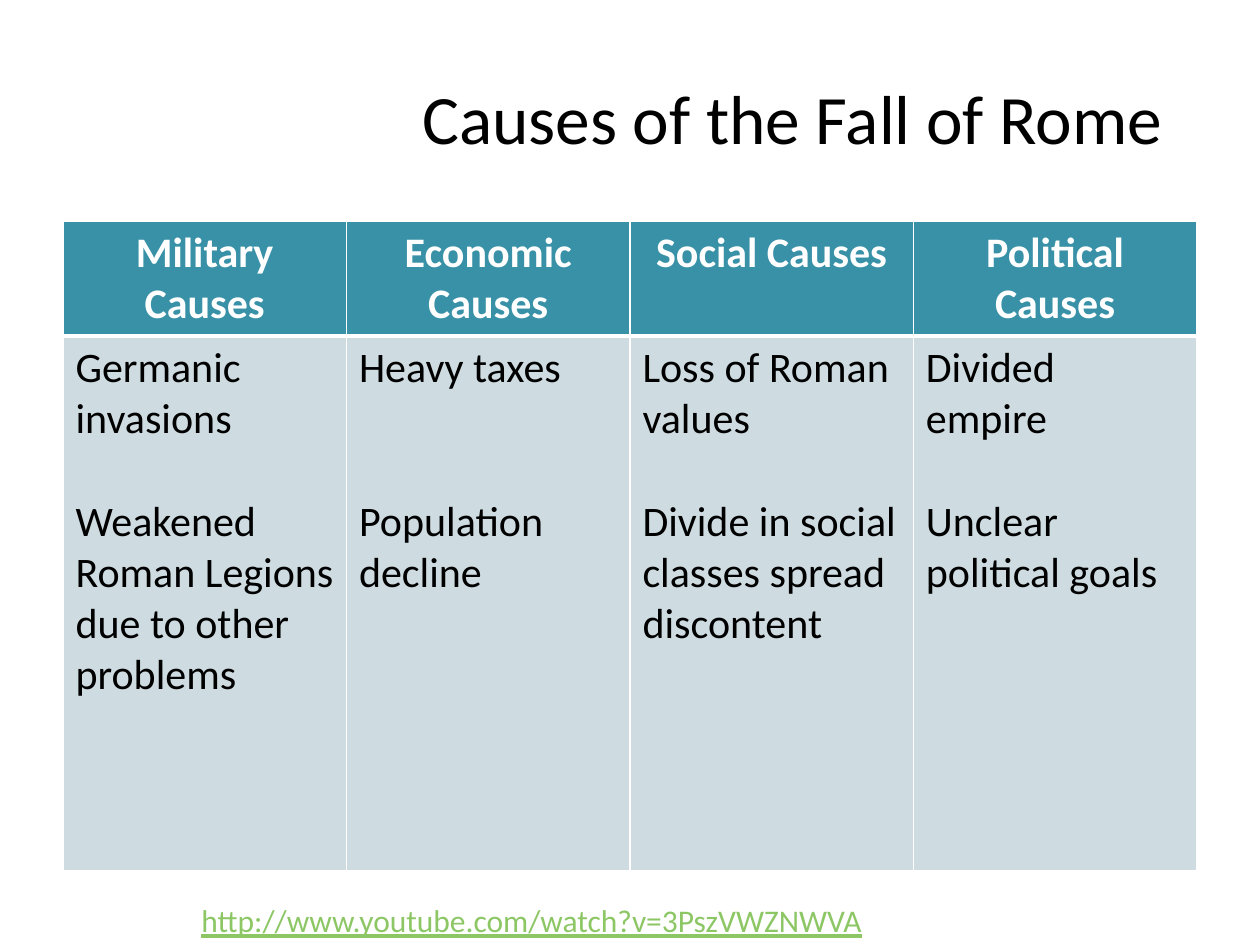
from lxml.etree import SubElement
from pptx import Presentation
from pptx.dml.color import RGBColor
from pptx.enum.text import MSO_ANCHOR, PP_ALIGN
from pptx.oxml.ns import qn
from pptx.util import Pt

TITLE = "Causes of the Fall of Rome"
LINK = "http://www.youtube.com/watch?v=3PszVWZNWVA"
# Heading, first cause, second cause, lines left open between the two
CAUSES = [
    ("Military Causes", "Germanic invasions",
     "Weakened Roman Legions due to other problems", 1),
    ("Economic Causes", "Heavy taxes", "Population decline", 2),
    ("Social Causes", "Loss of Roman values",
     "Divide in social classes spread discontent", 1),
    ("Political Causes", "Divided empire", "Unclear political goals", 1),
]

PX = 914400 // 126
FONT = "Calibri"
LINE_HEIGHT = 29.3
WHITE, BLACK, TEAL, PALE, GREEN = "FFFFFF", "000000", "3891A7", "CEDCE1", "8DC765"
TITLE_BOX = (388, 38, 809, 158)
LINK_BOX = (189, 895, 851, 50)
TABLE_LEFT, TABLE_TOP, COLUMN_WIDTH = 63, 221, 283.5
ROW_HEIGHTS = (114, 535)


def color(value):
    return RGBColor.from_string(value)


def emu(*lengths):
    return [round(length * PX) for length in lengths]


def style(paragraph, size, font_color, bold=False, align=PP_ALIGN.LEFT):
    paragraph.alignment = align
    font = paragraph.font
    font.name, font.size, font.bold = FONT, Pt(size), bold
    font.color.rgb = color(font_color)


def format_cell(cell, fill, bottom_width):
    """Add white borders, then the fill, in the order the file format needs."""
    properties = cell._tc.get_or_add_tcPr()
    for side, width in (("L", 1), ("R", 1), ("T", 1), ("B", bottom_width)):
        line = SubElement(properties, qn(f"a:ln{side}"), w=str(Pt(width)))
        SubElement(SubElement(line, qn("a:solidFill")), qn("a:srgbClr"), val=WHITE)
    cell.fill.solid()
    cell.fill.fore_color.rgb = color(fill)


def add_title(slide):
    title = slide.shapes.title
    title.left, title.top, title.width, title.height = emu(*TITLE_BOX)
    frame = title.text_frame
    frame.text = TITLE
    frame.vertical_anchor = MSO_ANCHOR.MIDDLE
    style(frame.paragraphs[0], 39.6, BLACK, align=PP_ALIGN.CENTER)


def add_causes(slide):
    box = emu(TABLE_LEFT, TABLE_TOP, COLUMN_WIDTH * len(CAUSES), sum(ROW_HEIGHTS))
    table = slide.shapes.add_table(len(ROW_HEIGHTS), len(CAUSES), *box).table
    table.horz_banding = False
    for row, height in zip(table.rows, emu(*ROW_HEIGHTS)):
        row.height = height
    for index, (heading, first, second, open_lines) in enumerate(CAUSES):
        table.columns[index].width = emu(COLUMN_WIDTH)[0]
        header, body = table.cell(0, index), table.cell(1, index)
        format_cell(header, TEAL, 3)
        format_cell(body, PALE, 1)
        header.text = heading
        style(header.text_frame.paragraphs[0], 24, WHITE, True, PP_ALIGN.CENTER)
        body.text = f"{first}\n{second}"
        for paragraph in body.text_frame.paragraphs:
            style(paragraph, 24, BLACK)
        paragraph.space_before = Pt(open_lines * LINE_HEIGHT)


def add_link(slide):
    frame = slide.shapes.add_textbox(*emu(*LINK_BOX)).text_frame
    frame.word_wrap = True
    frame.text = LINK
    paragraph = frame.paragraphs[0]
    style(paragraph, 18, GREEN)
    paragraph.font.underline = True


def main():
    presentation = Presentation()
    presentation.slide_width, presentation.slide_height = emu(1260, 945)
    slide = presentation.slides.add_slide(presentation.slide_layouts[5])
    add_title(slide)
    add_causes(slide)
    add_link(slide)
    presentation.save("out.pptx")


if __name__ == "__main__":
    main()
